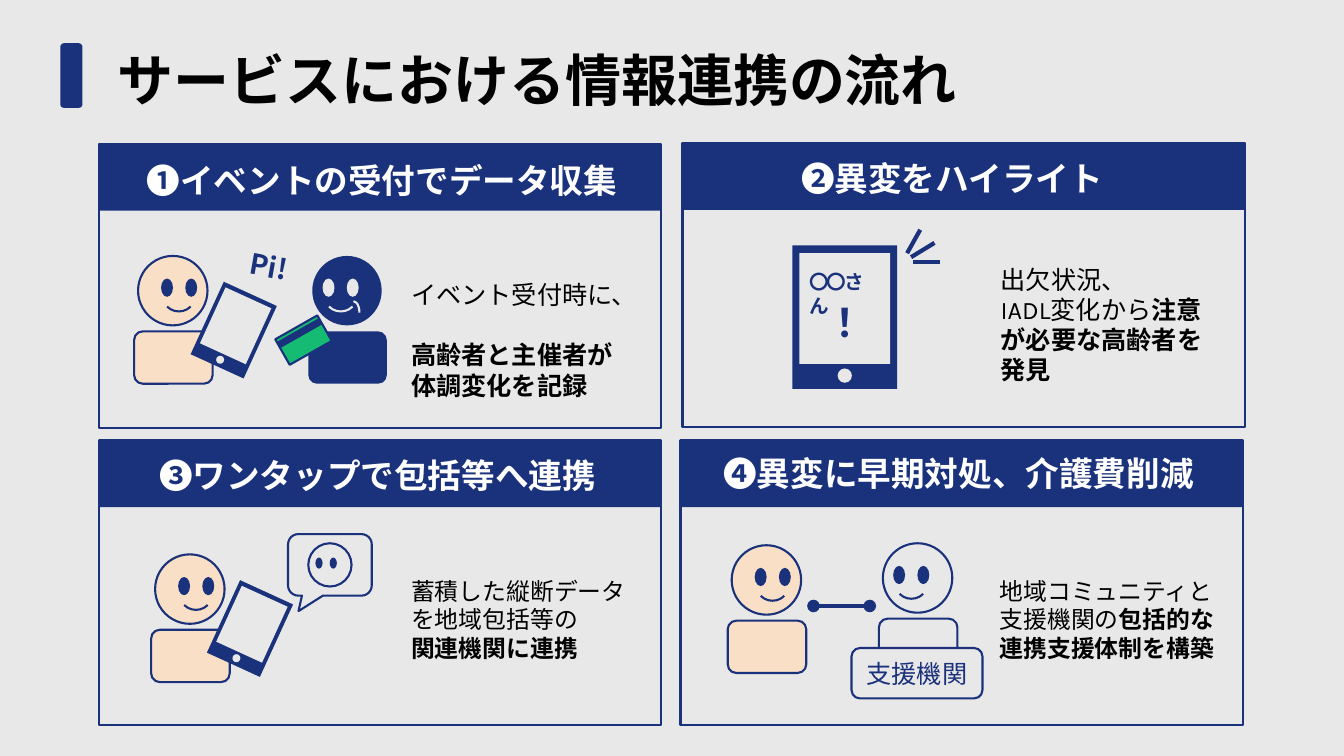
from math import cos, radians, sin

from lxml import etree
from pptx import Presentation
from pptx.dml.color import RGBColor
from pptx.enum.shapes import MSO_CONNECTOR, MSO_SHAPE
from pptx.enum.text import MSO_ANCHOR, PP_ALIGN
from pptx.oxml.ns import qn
from pptx.util import Cm, Pt

RECT = MSO_SHAPE.RECTANGLE
ROUNDED = MSO_SHAPE.ROUNDED_RECTANGLE
OVAL = MSO_SHAPE.OVAL
ARC = MSO_SHAPE.ARC
CALLOUT = MSO_SHAPE.ROUNDED_RECTANGULAR_CALLOUT
STRAIGHT = MSO_CONNECTOR.STRAIGHT
MIDDLE = MSO_ANCHOR.MIDDLE
CENTER = PP_ALIGN.CENTER

NAVY = RGBColor(0x1A, 0x31, 0x7C)
GRAY = RGBColor(0xE8, 0xE8, 0xE8)
SKIN = RGBColor(0xF9, 0xDF, 0xC5)
GREEN = RGBColor(0x15, 0xBB, 0x72)
BLACK = RGBColor(0, 0, 0)
WHITE = RGBColor(0xFF, 0xFF, 0xFF)

NOTO, KARLA, ARIAL = "Noto Sans CJK JP", "Karla", "Arial"
PANEL_WIDTH, PANEL_HEIGHT, HEADER_HEIGHT = 14.17, 7.16, 1.68
HEADING_HEIGHT, BODY_WIDTH = 1.27, 6.12

# Each panel: corner, heading (text, left, top, width),
# body (left, top, height, font, size, gap after first paragraph, paragraphs of (text, bold))
PANELS = [
    ((2.49, 3.63), ("❶イベントの受付でデータ収集", 3.45, 3.91, 12.47),
     (10.11, 6.91, 2.57, KARLA, 18, 21.6,
      [[("イベント受付時に、", False)], [("高齢者と主催者が", True)], [("体調変化を記録", True)]])),
    ((17.2, 3.61), ("❷異変をハイライト", 19.94, 3.86, 8.2),
     (24.97, 6.53, 3.33, KARLA, 18, 0,
      [[("出欠状況、", False)],
       [("IADL変化から", False), ("注意が必要な高齢者を発見", True)]])),
    ((2.49, 11.1), ("❸ワンタップで包括等へ連携", 3.76, 11.33, 11.63),
     (10.11, 14.4, 2.44, NOTO, 17, 0,
      [[("蓄積した縦断データを地域包括等の", False)], [("関連機関に連携", True)]])),
    ((17.15, 11.1), ("❹異変に早期対処、介護費削減", 17.98, 11.3, 12.37),
     (24.94, 14.4, 2.44, NOTO, 17, 0,
      [[("地域コミュニティと支援機関の", False), ("包括的な連携支援体制を構築", True)]])),
]
ALERT_RAYS = [(22.96, 6.48, 23.55, 6.12), (23.01, 6.6, 23.7, 6.6), (22.86, 6.38, 23.19, 5.79)]


class FlowSlide:
    def __init__(self, slide):
        self.slide = slide
        slide.background.fill.solid()
        slide.background.fill.fore_color.rgb = GRAY

    def shape(self, kind, left, top, width, height, fill=None, line=None, angle=0):
        shape = self.slide.shapes.add_shape(kind, Cm(left), Cm(top), Cm(width), Cm(height))
        shape.shadow.inherit = False
        shape.rotation = angle
        if fill is None:
            shape.fill.background()
        else:
            shape.fill.solid()
            shape.fill.fore_color.rgb = fill
        if line is None:
            shape.line.fill.background()
        else:
            shape.line.color.rgb = line
            shape.line.width = Pt(1.5)
        return shape

    def style(self, paragraph, size, color, font, bold=None, spacing=None):
        """Set the paragraph's font, for Latin and Japanese, and its line pitch."""
        paragraph.line_spacing = Pt(size * 1.2)
        paragraph.font.size = Pt(size)
        paragraph.font.color.rgb = color
        paragraph.font.name = font
        paragraph.font.bold = bold
        properties = paragraph._p.get_or_add_pPr().get_or_add_defRPr()
        etree.SubElement(properties, qn("a:ea")).set("typeface", NOTO)
        if spacing is not None:
            properties.set("spc", str(int(spacing * 100)))

    def text(self, words, left, top, width, height, size, color,
             font=NOTO, wrap=False, angle=0, spacing=None):
        box = self.slide.shapes.add_textbox(Cm(left), Cm(top), Cm(width), Cm(height))
        box.rotation = angle
        box.text_frame.word_wrap = wrap
        paragraph = box.text_frame.paragraphs[0]
        paragraph.text = words
        self.style(paragraph, size, color, font, True, spacing)

    def body(self, left, top, height, font, size, gap, paragraphs):
        box = self.slide.shapes.add_textbox(Cm(left), Cm(top), Cm(BODY_WIDTH), Cm(height))
        frame = box.text_frame
        frame.word_wrap = True
        for index, pieces in enumerate(paragraphs):
            paragraph = frame.add_paragraph() if index else frame.paragraphs[0]
            self.style(paragraph, size, BLACK, font)
            for words, bold in pieces:
                run = paragraph.add_run()
                run.text = words
                run.font.bold = bold
        frame.paragraphs[0].space_after = Pt(gap)

    def line(self, x1, y1, x2, y2, dots=False):
        connector = self.slide.shapes.add_connector(STRAIGHT, Cm(x1), Cm(y1), Cm(x2), Cm(y2))
        connector.line.color.rgb = NAVY
        connector.line.width = Pt(3)
        if dots:
            outline = connector.line._get_or_add_ln()
            for end in ("a:headEnd", "a:tailEnd"):
                etree.SubElement(outline, qn(end)).set("type", "oval")
        etree.SubElement(connector._element.spPr, qn("a:effectLst"))

    def panel(self, corner, heading, body):
        left, top = corner
        self.shape(RECT, left, top, PANEL_WIDTH, HEADER_HEIGHT, NAVY)
        self.shape(RECT, left, top, PANEL_WIDTH, PANEL_HEIGHT, line=NAVY)
        self.text(*heading, HEADING_HEIGHT, 24, WHITE)
        self.body(*body)

    def person(self, left, top, fill, line=NAVY, features=NAVY, mirrored=False):
        """Draw a figure whose head has its corner at left, top."""
        head = 1.75

        def place(offset, width):
            return left + (head - offset - width if mirrored else offset)

        self.shape(OVAL, left, top, head, head, fill, line)
        self.shape(ROUNDED, left - 0.1, top + 1.9, 1.98, 1.32, fill, line)
        for eye in (0.58, 1.19):
            self.shape(OVAL, place(eye, 0.3), top + 0.57, 0.3, 0.46, features)
        smile = self.shape(ARC, place(0.61, 0.84), top + 0.56, 0.84, 0.84, line=features)
        smile.adjustments[0] = 27  # 45 degrees
        smile.adjustments[1] = 81  # 135 degrees

    def tablet(self, center_x, center_y, scale=1.0, angle=0.0):
        turn = radians(angle)
        for kind, width, height, drop, fill in (
                (RECT, 1.47, 2.01, 0, NAVY),
                (RECT, 1.27, 1.55, -0.12, GRAY),
                (OVAL, 0.2, 0.2, 0.82, GRAY)):
            width, height, drop = width * scale, height * scale, drop * scale
            self.shape(kind, center_x - drop * sin(turn) - width / 2,
                       center_y + drop * cos(turn) - height / 2, width, height, fill, angle=angle)

    def reception(self):
        self.person(3.48, 6.45, SKIN)
        self.person(7.87, 6.45, NAVY, None, GRAY, mirrored=True)
        self.shape(ARC, 8.76, 7.59, 0.3, 0.58, line=GRAY)
        self.shape(RECT, 7.04, 8.2, 1.22, 0.74, GREEN, NAVY, -29.6)
        self.shape(RECT, 6.93, 8.31, 1.22, 0.18, NAVY, angle=-29.6)
        self.tablet(5.89, 8.32, angle=24.6)
        self.text("Pi!", 6.05, 6.17, 1.57, 1.12, 20, NAVY, angle=10)

    def highlight(self):
        self.tablet(21.29, 7.99, scale=1.8)
        self.text("〇〇さん", 20.14, 6.68, 2.16, 0.86, 14, NAVY, wrap=True, spacing=-1.5)
        self.text("！", 20.55, 7.39, 1.52, 1.45, 28, NAVY)
        for ray in ALERT_RAYS:
            self.line(*ray)

    def one_tap(self):
        bubble = self.shape(CALLOUT, 7.26, 13.46, 2.11, 1.55, line=NAVY)
        for index, value in enumerate((-0.375, 0.752, 0.167)):
            bubble.adjustments[index] = value
        self.shape(OVAL, 7.77, 13.69, 1.09, 1.09, GRAY, NAVY)
        for eye in (7.95, 8.31):
            self.shape(OVAL, eye, 14.05, 0.18, 0.28, NAVY)
        self.person(3.91, 13.97, SKIN)
        self.tablet(6.3, 15.84, angle=24.6)

    def support(self):
        self.person(22.25, 13.69, GRAY, mirrored=True)
        self.line(20.5, 15.27, 21.92, 15.27, dots=True)
        self.person(18.44, 13.74, SKIN)
        agency = self.shape(ROUNDED, 21.46, 16.33, 3.3, 1.27, GRAY, NAVY)
        agency.text_frame.vertical_anchor = MIDDLE
        label = agency.text_frame.paragraphs[0]
        label.text = "支援機関"
        label.alignment = CENTER
        self.style(label, 18, NAVY, NOTO)


def main():
    deck = Presentation()
    deck.slide_width, deck.slide_height = Cm(33.87), Cm(19.05)
    flow = FlowSlide(deck.slides.add_slide(deck.slide_layouts[6]))
    flow.shape(ROUNDED, 1.52, 1.09, 0.56, 1.63, NAVY)
    flow.text("サービスにおける情報連携の流れ", 2.72, 1.02, 28.8, 2.13, 40, BLACK, ARIAL, wrap=True)
    for panel in PANELS:
        flow.panel(*panel)
    flow.reception()
    flow.highlight()
    flow.one_tap()
    flow.support()
    deck.save("out.pptx")


if __name__ == "__main__":
    main()
